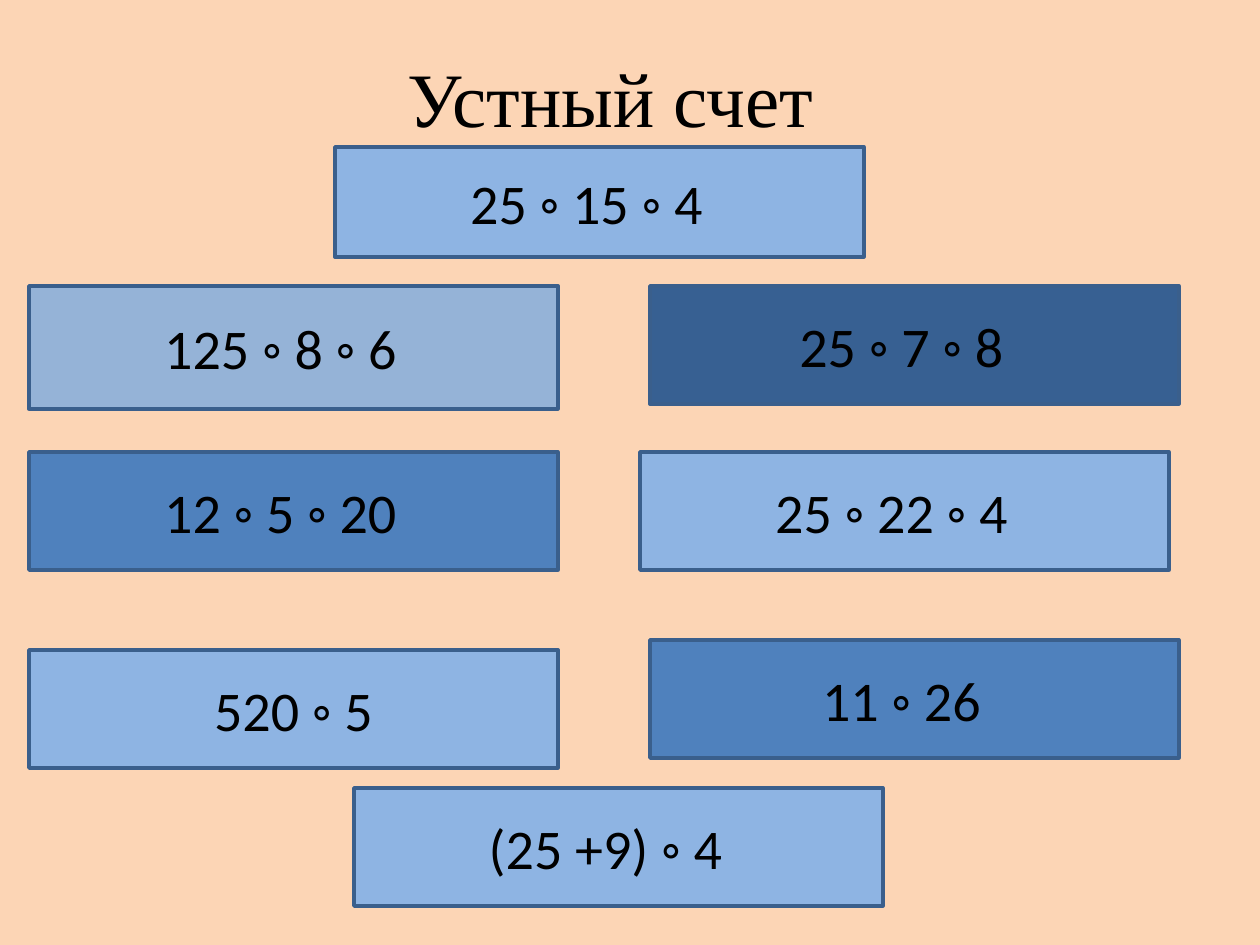
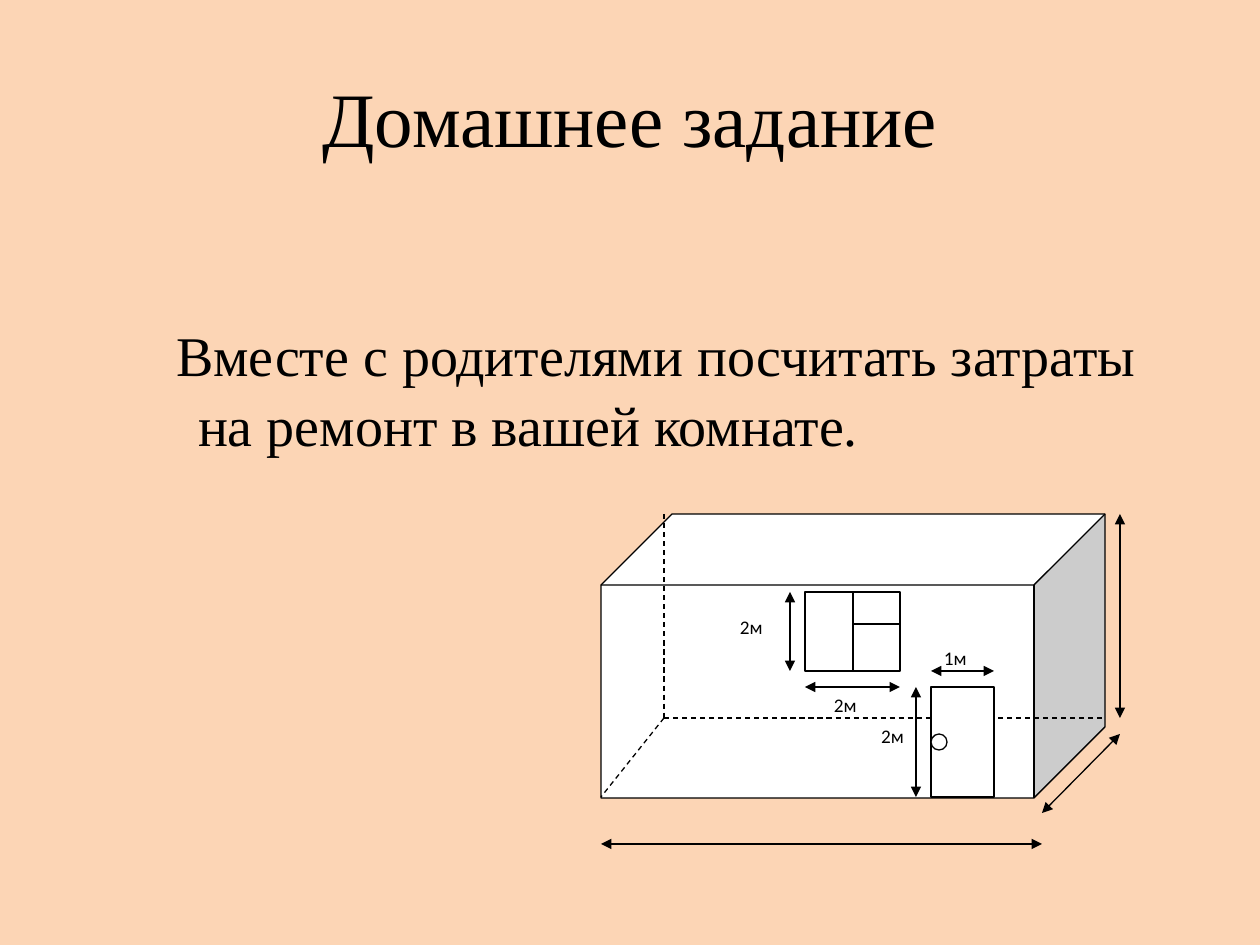
from lxml import etree
from pptx import Presentation
from pptx import util as u
from pptx.dml.color import RGBColor
from pptx.enum import dml, shapes, text
from pptx.oxml.ns import qn

COLORS = {
    "background": "FCD5B5", "ink": "000000", "paper": "FFFFFF", "border": "3A5F8C",
    "light": "8EB4E3", "muted": "95B3D7", "medium": "4F81BD", "dark": "376092",
}
SERIF, SANS = "Times New Roman", "Calibri"
PX = 914400 / 126
INSET_X, INSET_Y = 13, 6

CARD_WIDTH, CARD_HEIGHT = 529, 118
CARDS = [
    ("25 ◦ 15 ◦ 4", 335, 147, 110, "light", 26),
    ("125 ◦ 8 ◦ 6", 29, 286, 123, "muted", 26),
    ("12 ◦ 5 ◦ 20", 29, 452, CARD_HEIGHT, "medium", 26),
    ("25 ◦ 7 ◦ 8", 650, 286, CARD_HEIGHT, "dark", 26),
    ("25 ◦ 22 ◦ 4", 640, 452, CARD_HEIGHT, "light", 26),
    ("11 ◦ 26", 650, 640, CARD_HEIGHT, "medium", 26),
    ("520 ◦ 5", 29, 650, CARD_HEIGHT, "light", 0),
    ("(25 +9) ◦ 4", 354, 788, CARD_HEIGHT, "light", 26),
]

HOMEWORK = "Вместе с родителями посчитать затраты на ремонт в вашей комнате."
ROOM = (601, 514, 504, 284)
DOOR = (931, 687, 63, 110)
WINDOW = (805, 592, 95, 79)
KNOB = (931, 734, 16, 16)
SIZE_LABELS = [
    ("2м", (727, 609, 95, 47)),
    ("2м", (821, 687, 95, 47)),
    ("2м", (868, 718, 79, 47)),
    ("1м", (931, 640, 63, 32)),
]
HIDDEN_EDGES = [(664, 718, 1105, 718), (664, 718, 601, 797), (664, 514, 664, 718)]
WINDOW_BARS = [(853, 592, 853, 671), (853, 624, 900, 624)]
DIMENSIONS = [
    (601, 844, 1042, 844), (916, 687, 916, 797), (931, 671, 994, 671),
    (1120, 514, 1120, 718), (805, 687, 900, 687), (790, 592, 790, 671),
    (1120, 734, 1042, 813),
]


def px(value):
    return u.Emu(round(value * PX))


def color(name):
    return RGBColor.from_string(COLORS[name])


def add_page(deck):
    page = deck.slides.add_slide(deck.slide_layouts[6])
    page.background.fill.solid()
    page.background.fill.fore_color.rgb = color("background")
    return page


def write(box, wording, size, font, align, anchor, extra_right=0):
    frame = box.text_frame
    frame.text = wording
    frame.word_wrap = True
    frame.vertical_anchor = anchor
    frame.margin_left, frame.margin_right = px(INSET_X), px(INSET_X + extra_right)
    frame.margin_top = frame.margin_bottom = px(INSET_Y)
    para = frame.paragraphs[0]
    para.alignment = align
    for span in para.runs:
        span.font.size = u.Pt(size)
        span.font.name = font
        span.font.color.rgb = color("ink")
    return para


def add_text(page, area, *style):
    box = page.shapes.add_textbox(*map(px, area))
    return write(box, *style)


def add_title(page, wording, area, extra_right=0):
    add_text(page, area, wording, 44, SERIF, text.PP_ALIGN.CENTER,
             text.MSO_ANCHOR.MIDDLE, extra_right)


def add_box(page, kind, area, fill="paper", line="ink", width=0.75):
    box = page.shapes.add_shape(kind, *map(px, area))
    box.shadow.inherit = False
    box.fill.solid()
    box.fill.fore_color.rgb = color(fill)
    if line:
        box.line.color.rgb = color(line)
        box.line.width = u.Pt(width)
    else:
        box.line.fill.background()
    return box


def add_line(page, ends, dashed=False, arrows=False):
    line = page.shapes.add_connector(shapes.MSO_CONNECTOR.STRAIGHT, *map(px, ends))
    line.line.color.rgb = color("ink")
    line.line.width = u.Pt(0.75)
    if dashed:
        line.line.dash_style = dml.MSO_LINE.DASH
    if arrows:
        for end in ("a:headEnd", "a:tailEnd"):
            etree.SubElement(line.line._get_or_add_ln(), qn(end), type="triangle")
    etree.SubElement(line._element.spPr, qn("a:effectLst"))


def build_mental_arithmetic(deck):
    page = add_page(deck)
    add_title(page, "Устный счет", (63, 38, 1113, 117), 18)
    for wording, left, top, height, fill, extra_right in CARDS:
        card = add_box(page, shapes.MSO_SHAPE.RECTANGLE,
                       (left, top, CARD_WIDTH, height), fill, "border", 2)
        write(card, wording, 32, SANS, text.PP_ALIGN.CENTER,
              text.MSO_ANCHOR.MIDDLE, extra_right)


def build_homework(deck):
    page = add_page(deck)
    add_title(page, "Домашнее задание", (63, 38, 1134, 158))
    para = add_text(page, (137, 312, 1024, 328), HOMEWORK, 32, SERIF,
                    text.PP_ALIGN.LEFT, text.MSO_ANCHOR.TOP)
    para.line_spacing = 1.04
    properties = para._p.get_or_add_pPr()
    properties.set("marL", str(px(48)))
    properties.set("indent", str(px(-22)))

    kinds = shapes.MSO_SHAPE
    room = add_box(page, kinds.CUBE, ROOM)
    room.adjustments[0] = 0.25
    for wording, area in SIZE_LABELS:
        label = add_box(page, kinds.RECTANGLE, area, line=None)
        write(label, wording, 11, SANS, text.PP_ALIGN.LEFT, text.MSO_ANCHOR.TOP)
    for edge in HIDDEN_EDGES:
        add_line(page, edge, dashed=True)
    for opening in (DOOR, WINDOW):
        add_box(page, kinds.RECTANGLE, opening)
    for bar in WINDOW_BARS:
        add_line(page, bar)
    for dimension in DIMENSIONS:
        add_line(page, dimension, arrows=True)
    add_box(page, kinds.FLOWCHART_CONNECTOR, KNOB)


def main():
    deck = Presentation()
    deck.slide_width, deck.slide_height = px(1260), px(945)
    build_mental_arithmetic(deck)
    build_homework(deck)
    deck.save("out.pptx")


if __name__ == "__main__":
    main()
